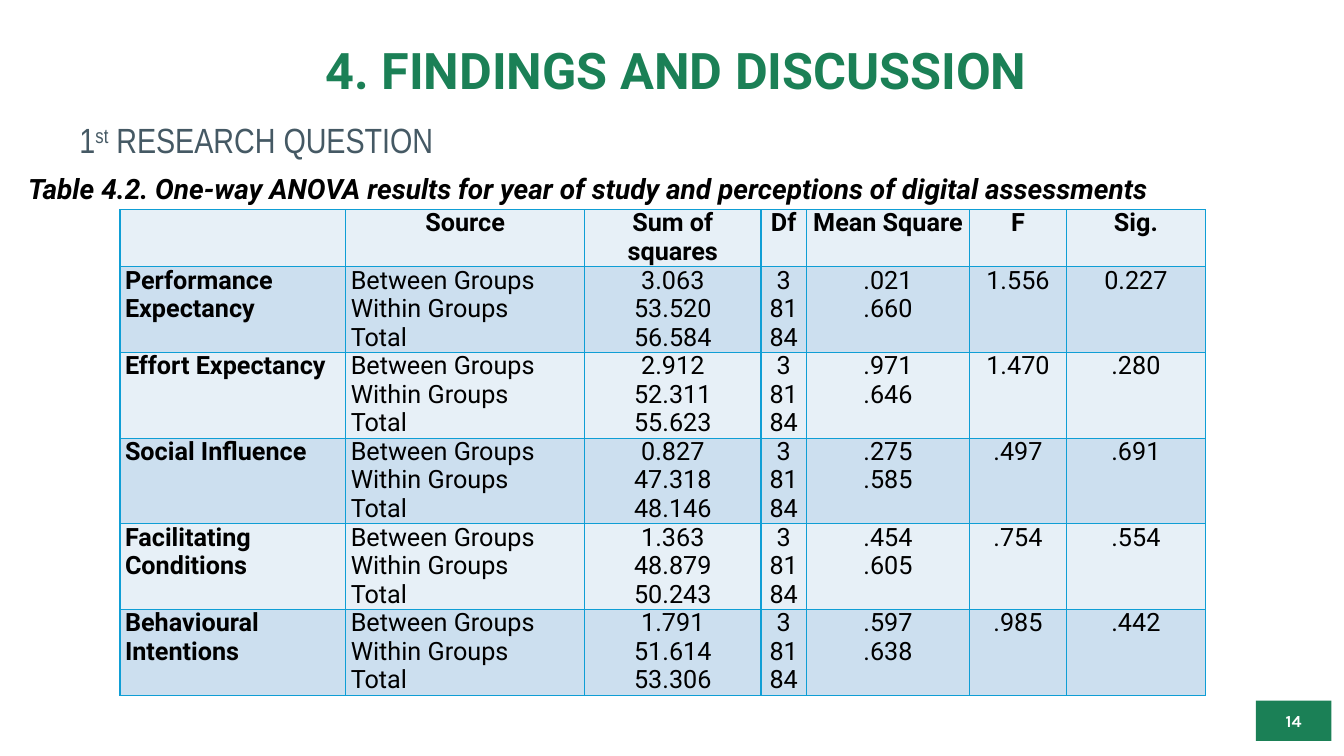
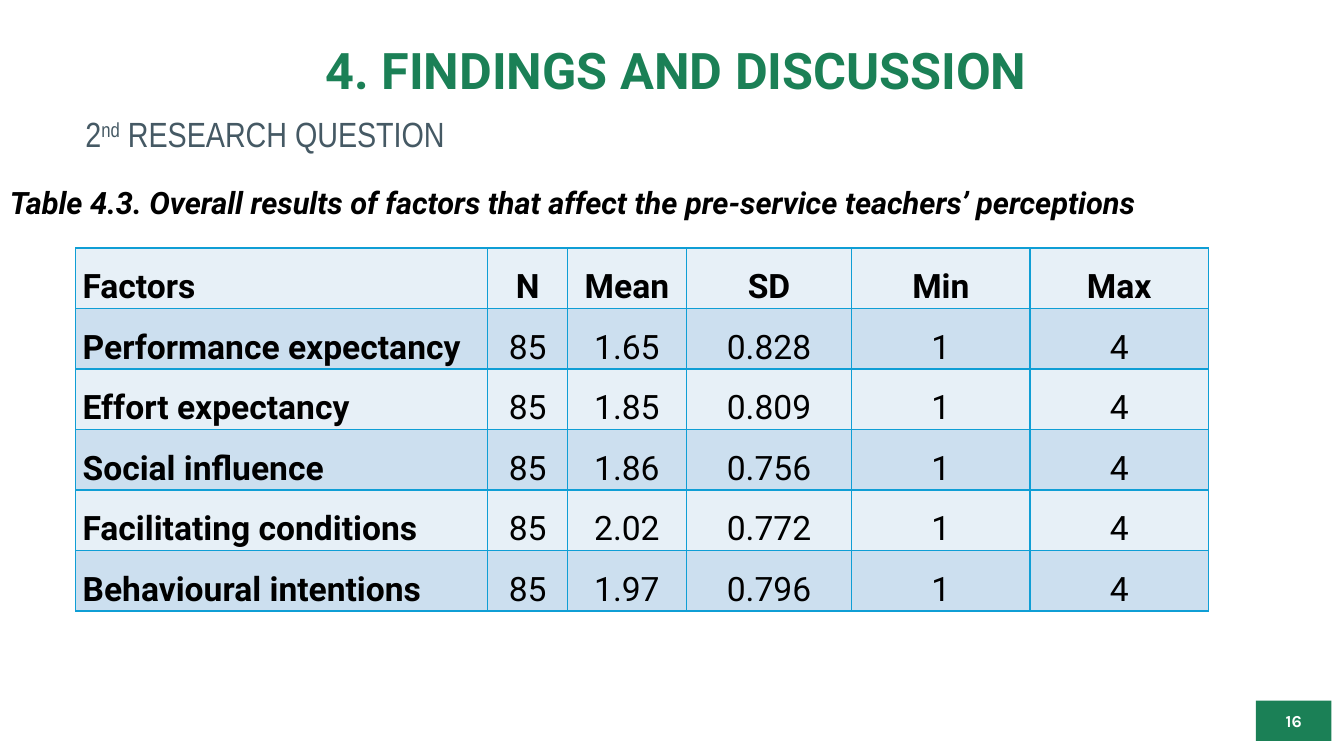
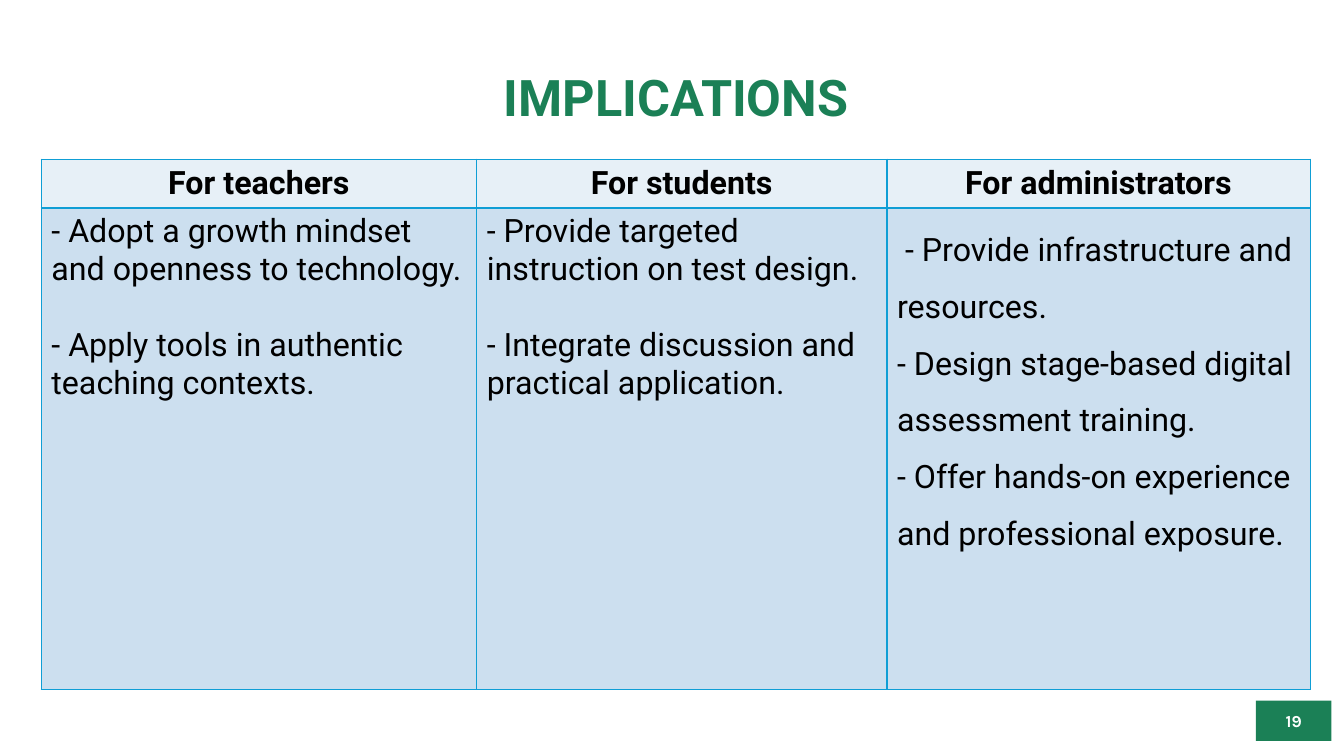
from lxml import etree
from pptx import Presentation
from pptx import util as u
from pptx.dml.color import RGBColor
from pptx.enum import shapes, text
from pptx.oxml import ns

COLUMNS, ROWS = 80, 45
CELL = u.Inches(1) / 6

COLOURS = {
    "green": "1B8056",
    "slate": "455964",
    "black": "000000",
    "white": "FFFFFF",
    "border": "0F9ED5",
    "pale": "E7F0F7",
    "blue": "CCDFEF",
}
LEFT, CENTER, JUSTIFY = text.PP_ALIGN.LEFT, text.PP_ALIGN.CENTER, text.PP_ALIGN.JUSTIFY
TOP, MIDDLE = text.MSO_ANCHOR.TOP, text.MSO_ANCHOR.MIDDLE

SECTION = "4. FINDINGS AND DISCUSSION"
ANOVA_HEADER = ["", "Source", "Sum of squares", "Df", "Mean Square", "F", "Sig."]
GROUPS = ["Between Groups", "Within Groups", "Total"]
DEGREES = ["3", "81", "84"]
ANOVA = [
    ("Performance Expectancy", ["3.063", "53.520", "56.584"], [".021", ".660"], "1.556", "0.227"),
    ("Effort Expectancy", ["2.912", "52.311", "55.623"], [".971", ".646"], "1.470", ".280"),
    ("Social Influence", ["0.827", "47.318", "48.146"], [".275", ".585"], ".497", ".691"),
    ("Facilitating Conditions", ["1.363", "48.879", "50.243"], [".454", ".605"], ".754", ".554"),
    ("Behavioural Intentions", ["1.791", "51.614", "53.306"], [".597", ".638"], ".985", ".442"),
]
FACTOR_HEADER = ["Factors", "N", "Mean", "SD", "Min", "Max"]
FACTORS = [
    ("Performance expectancy", "1.65", "0.828"),
    ("Effort expectancy", "1.85", "0.809"),
    ("Social influence", "1.86", "0.756"),
    ("Facilitating conditions", "2.02", "0.772"),
    ("Behavioural intentions", "1.97", "0.796"),
]
IMPLICATIONS = [
    ["For teachers", "For students", "For administrators"],
    [
        ["- Adopt a growth mindset and openness to technology.",
         "- Apply tools in authentic teaching contexts."],
        ["- Provide targeted instruction on test design.",
         "- Integrate discussion and practical application."],
        [" - Provide infrastructure and resources.",
         "- Design stage-based digital assessment training.",
         "- Offer hands-on experience and professional exposure."],
    ],
]


def cells(*counts):
    """Turn counts of grid cells into lengths."""
    return [u.Emu(round(count * CELL)) for count in counts]


def colour(name):
    return RGBColor.from_string(COLOURS[name])


def write(frame, content, size, font="Roboto", ink="black", bold=False, italic=False,
          align=LEFT, spacing=None, gap=0):
    """Write one string or a list of paragraphs; text between ^ marks is raised."""
    lines = [content] if isinstance(content, str) else content
    for index, line in enumerate(lines):
        para = frame.add_paragraph() if index else frame.paragraphs[0]
        para.alignment = align
        if spacing:
            para.line_spacing = spacing
        if index and gap:
            para.space_before = u.Pt(gap)
        for position, piece in enumerate(line.split("^")):
            if not piece:
                continue
            span = para.add_run()
            span.text = piece
            span.font.size, span.font.name = u.Pt(size), font
            span.font.bold, span.font.italic = bold, italic
            span.font.color.rgb = colour(ink)
            if position % 2:
                span._r.get_or_add_rPr().set("baseline", "30000")


def add_text(page, at, content, anchor=TOP, **style):
    frame = page.shapes.add_textbox(*cells(*at)).text_frame
    frame.word_wrap = True
    frame.vertical_anchor = anchor
    write(frame, content, **style)


def add_page(deck, title, number, title_top=0):
    """Add a page with the shared number badge and title."""
    page = deck.slides.add_slide(deck.slide_layouts[6])
    badge = page.shapes.add_shape(shapes.MSO_SHAPE.RECTANGLE, *cells(74.76, 41.7, 4.5, 2.4))
    badge.shadow.inherit = False
    badge.fill.solid()
    badge.fill.fore_color.rgb = colour("green")
    badge.line.fill.background()
    badge.text_frame.vertical_anchor = MIDDLE
    write(badge.text_frame, str(number), size=12, font="Karla", ink="white", bold=True, align=CENTER)
    add_text(page, (5.76, title_top, 69, 8.7), title, anchor=MIDDLE, size=36, ink="green",
             bold=True, align=CENTER, spacing=0.9)
    return page


def add_question(page, at, content):
    add_text(page, at, content, size=25, font="Arial Narrow", ink="slate")


def add_caption(page, at, content, size):
    add_text(page, at, content, size=size, bold=True, italic=True, align=JUSTIFY, spacing=1.5)


def add_borders(cell):
    properties = cell._tc.get_or_add_tcPr()
    for side in ("lnL", "lnR", "lnT", "lnB"):
        line = etree.SubElement(properties, ns.qn(f"a:{side}"), w=str(u.Pt(1)))
        fill = etree.SubElement(line, ns.qn("a:solidFill"))
        etree.SubElement(fill, ns.qn("a:srgbClr"), val=COLOURS["border"])


def add_grid(page, left, top, widths, heights, content, style, side=None):
    """Add a banded table; style(row, column) gives the text format of a cell."""
    at = cells(left, top, sum(widths), sum(heights))
    table = page.shapes.add_table(len(heights), len(widths), *at).table
    table.first_row = table.horz_banding = False
    for column, width in zip(table.columns, cells(*widths)):
        column.width = width
    for row, height in zip(table.rows, cells(*heights)):
        row.height = height
    for r, line in enumerate(content):
        for c, entry in enumerate(line):
            cell = table.cell(r, c)
            add_borders(cell)
            cell.fill.solid()
            cell.fill.fore_color.rgb = colour("blue" if r % 2 else "pale")
            if side is not None:
                cell.margin_left = cell.margin_right = u.Inches(side)
                cell.margin_top = cell.margin_bottom = 0
            form = style(r, c)
            cell.vertical_anchor = form.pop("anchor", TOP)
            write(cell.text_frame, entry, **form)


def anova_style(row, column):
    return dict(size=18, bold=row == 0 or column == 0, spacing=u.Pt(20.4),
                align=JUSTIFY if row and column < 2 else CENTER)


def factor_style(row, column):
    return dict(size=24, bold=row == 0 or column == 0, spacing=1.5,
                align=CENTER if column else JUSTIFY)


def implication_style(row, column):
    if row == 0:
        return dict(size=23, bold=True, align=CENTER, anchor=MIDDLE)
    if column == 2:
        return dict(size=23, spacing=1.5)
    return dict(size=23, gap=27)


def add_anova_page(deck):
    page = add_page(deck, SECTION, 14)
    add_question(page, (4.14, 6.78, 35.88, 3.12), "1^st^ RESEARCH QUESTION")
    add_caption(page, (1.08, 8.94, 78.9, 3.3),
                "Table 4.2. One-way ANOVA results for year of study and perceptions of digital assessments", 20)
    body = [[factor, GROUPS, sums, DEGREES, means, f, sig] for factor, sums, means, f, sig in ANOVA]
    add_grid(page, 7.14, 12.48, [13.44, 14.22, 10.5, 2.7, 9.72, 5.76, 8.28],
             [3.4] + [5.1] * len(body), [ANOVA_HEADER] + body, anova_style, side=0.05)


def add_factors_page(deck):
    page = add_page(deck, SECTION, 16)
    add_question(page, (4.5, 6.42, 50.82, 3.12), "2^nd^ RESEARCH QUESTION")
    add_caption(page, (0, 9.54, COLUMNS, 3.6),
                "Table 4.3. Overall results of factors that affect the pre-service teachers’ perceptions", 22)
    body = [[factor, "85", mean, deviation, "1", "4"] for factor, mean, deviation in FACTORS]
    add_grid(page, 4.5, 14.76, [24.54, 4.74, 7.08, 9.84, 10.62, 10.62],
             [3.6] * (len(body) + 1), [FACTOR_HEADER] + body, factor_style, side=0.07)


def add_implications_page(deck):
    page = add_page(deck, "IMPLICATIONS", 19, title_top=1.62)
    add_grid(page, 2.46, 9.48, [25.92, 24.42, 25.2], [2.88, 28.68], IMPLICATIONS, implication_style)


def main():
    deck = Presentation()
    deck.slide_width, deck.slide_height = cells(COLUMNS, ROWS)
    add_anova_page(deck)
    add_factors_page(deck)
    add_implications_page(deck)
    deck.save("out.pptx")


if __name__ == "__main__":
    main()
